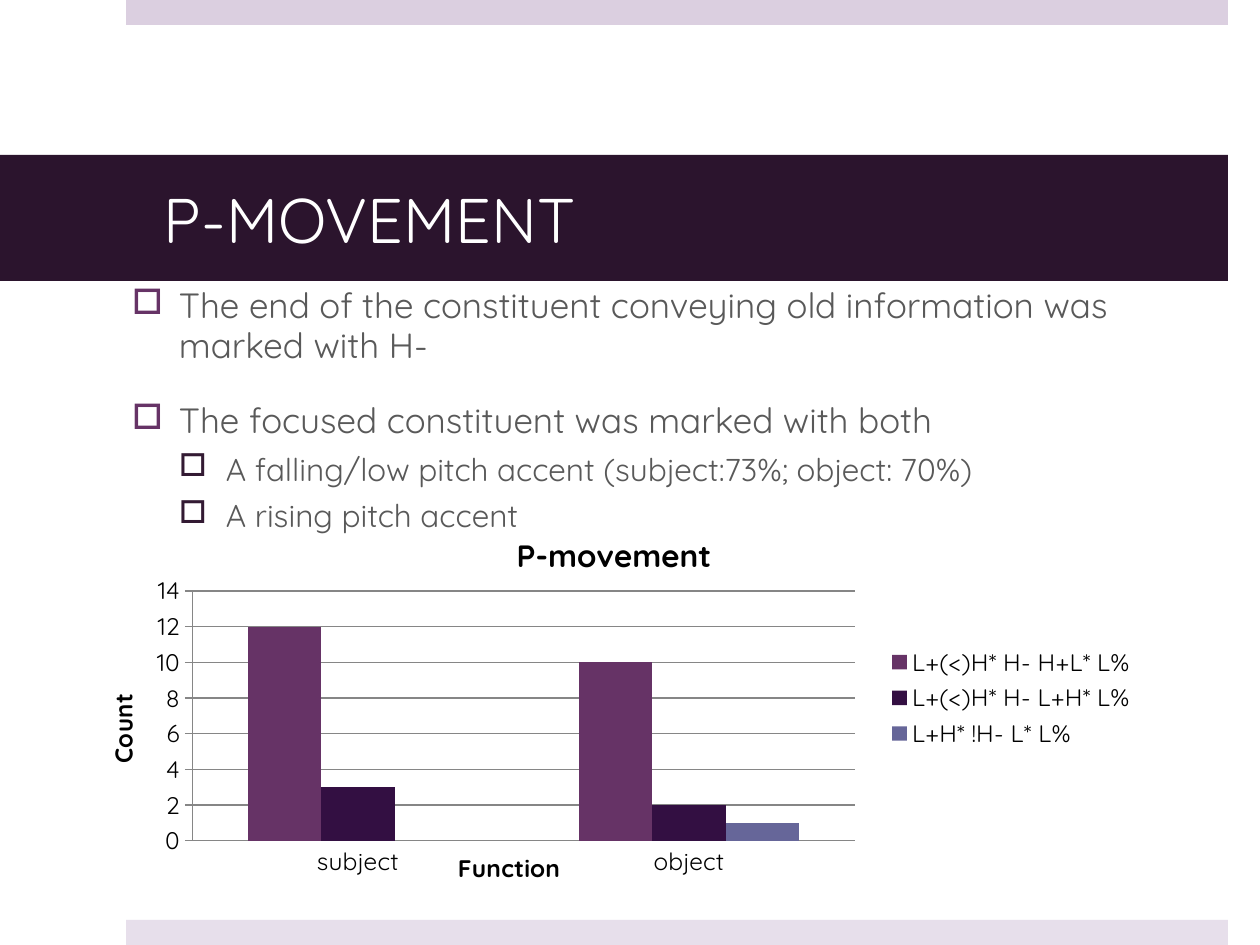
import pptx
import pptx.chart.data
import pptx.dml.color
import pptx.enum.chart
import pptx.enum.shapes
import pptx.enum.text
import pptx.oxml
import pptx.oxml.ns
import pptx.util
from lxml import etree

RGBColor = pptx.dml.color.RGBColor
WHITE = RGBColor(0xFF, 0xFF, 0xFF)
BLACK = RGBColor(0, 0, 0)
GRAY = RGBColor(0x86, 0x86, 0x86)
BODY_GRAY = RGBColor(0x59, 0x59, 0x59)
TITLE_PURPLE = RGBColor(0x2B, 0x14, 0x2D)
TOP_LILAC = RGBColor(0xDB, 0xCF, 0xE0)
BOTTOM_LILAC = RGBColor(0xE7, 0xDF, 0xEB)
PLUM = RGBColor(0x66, 0x33, 0x66)
DARK_PLUM = RGBColor(0x33, 0x1A, 0x33)
VIOLET = RGBColor(0x33, 0x0F, 0x42)
SLATE = RGBColor(0x66, 0x66, 0x99)

FONT = "Quicksand"
EMU_PER_PX = 914400 / 126

# Level: text size, space before, indent in px, bullet colour
LEVELS = [(20, 20, 47, PLUM), (18, 6, 94, DARK_PLUM)]
HANGING = 47
BULLETS = [
    (0, "The end of the constituent conveying old information was marked with H-"),
    (0, "The focused constituent was marked with both"),
    (1, "A falling/low pitch accent (subject:73%; object: 70%)"),
    (1, "A rising pitch accent"),
]

CATEGORIES = ["subject", "object"]
SERIES = [
    ("L+(<)H* H- H+L* L%", (12, 10), PLUM),
    ("L+(<)H* H- L+H* L%", (3, 2), VIOLET),
    ("L+H* !H- L* L%", (None, 1), SLATE),
]


def px(length):
    return pptx.util.Emu(round(length * EMU_PER_PX))


def set_values(target, values):
    for name, value in values.items():
        setattr(target, name, value)


def set_font(font, size, color, bold=False):
    set_values(font, {"name": FONT, "size": pptx.util.Pt(size), "bold": bold})
    font.color.rgb = color


def add_bar(slide, box, color):
    shape = slide.shapes.add_shape(
        pptx.enum.shapes.MSO_SHAPE.RECTANGLE, *map(px, box))
    shape.shadow.inherit = False
    shape.fill.solid()
    shape.fill.fore_color.rgb = color
    shape.line.fill.background()
    return shape


def add_title(slide, box, text):
    frame = add_bar(slide, box, TITLE_PURPLE).text_frame
    set_values(frame, {
        "word_wrap": True,
        "vertical_anchor": pptx.enum.text.MSO_ANCHOR.MIDDLE,
        "margin_left": px(164), "margin_right": px(38),
        "margin_top": px(6), "margin_bottom": px(6),
    })
    paragraph = frame.paragraphs[0]
    paragraph.alignment = pptx.enum.text.PP_ALIGN.LEFT
    run = paragraph.add_run()
    run.text = text
    set_font(run.font, 36, WHITE)


def add_bullet(paragraph, indent, color):
    properties = paragraph._p.get_or_add_pPr()
    properties.set("marL", str(px(indent)))
    properties.set("indent", str(-px(HANGING)))
    bullet_color = etree.SubElement(properties, pptx.oxml.ns.qn("a:buClr"))
    etree.SubElement(bullet_color, pptx.oxml.ns.qn("a:srgbClr"), val=str(color))
    etree.SubElement(properties, pptx.oxml.ns.qn("a:buChar"), char="□")


def add_body(slide, box, bullets):
    frame = slide.shapes.add_textbox(*map(px, box)).text_frame
    set_values(frame, {"word_wrap": True, "margin_left": px(12), "margin_right": px(12),
                       "margin_top": px(6), "margin_bottom": px(6)})
    for index, (level, text) in enumerate(bullets):
        size, space, indent, color = LEVELS[level]
        paragraph = frame.paragraphs[0] if index == 0 else frame.add_paragraph()
        set_values(paragraph, {"level": level, "line_spacing": 0.95,
                               "space_before": pptx.util.Pt(space)})
        add_bullet(paragraph, indent, color)
        run = paragraph.add_run()
        run.text = text
        set_font(run.font, size, BODY_GRAY)


def place(element, position, **values):
    """Give a chart part a manual layout in fractions of the chart."""
    for layout in element.findall(pptx.oxml.ns.qn("c:layout")):
        element.remove(layout)
    layout = etree.Element(pptx.oxml.ns.qn("c:layout"))
    manual = etree.SubElement(layout, pptx.oxml.ns.qn("c:manualLayout"))
    for name, value in {**values, "xMode": "edge", "yMode": "edge", **position}.items():
        etree.SubElement(manual, pptx.oxml.ns.qn("c:" + name), val=str(value))
    text = element.find(pptx.oxml.ns.qn("c:tx"))
    element.insert(0 if text is None else 1, layout)


def set_title(owner, text, size):
    frame = owner.text_frame
    run = frame.paragraphs[0].add_run()
    run.text = text
    set_font(run.font, size, BLACK, bold=True)


def format_axis(axis, title, position, tick_mark):
    set_title(axis.axis_title, title, 14)
    place(axis.axis_title._element, position)
    set_font(axis.tick_labels.font, 14, BLACK)
    axis.major_tick_mark = tick_mark
    axis.minor_tick_mark = pptx.enum.chart.XL_TICK_MARK.NONE
    axis.format.line.color.rgb = GRAY


def add_count_chart(slide, box):
    data = pptx.chart.data.CategoryChartData()
    data.categories = CATEGORIES
    for name, values, _ in SERIES:
        data.add_series(name, values)
    chart = slide.shapes.add_chart(
        pptx.enum.chart.XL_CHART_TYPE.COLUMN_CLUSTERED, *map(px, box), data).chart
    set_font(chart.font, 10, BLACK)
    set_title(chart.chart_title, "P-movement", 18)

    # Plot
    plot = chart.plots[0]
    set_values(plot, {"gap_width": 150, "overlap": 0, "vary_by_categories": False})
    for series, (_, _, color) in zip(plot.series, SERIES):
        series.format.fill.solid()
        series.format.fill.fore_color.rgb = color
        series.invert_if_negative = False
    plot_area = chart._chartSpace.chart.plotArea
    place(plot_area, {"x": 0.106, "y": 0.211, "w": 0.619, "h": 0.676},
          layoutTarget="inner")

    # Axes
    marks = pptx.enum.chart.XL_TICK_MARK
    format_axis(chart.category_axis, "Function", {"x": 0.35, "y": 0.9}, marks.NONE)
    format_axis(chart.value_axis, "Count", {"x": 0.02, "y": 0.48}, marks.OUTSIDE)
    set_values(chart.value_axis, {"minimum_scale": 0, "maximum_scale": 14,
                                  "major_unit": 2, "has_major_gridlines": True})
    chart.value_axis.major_gridlines.format.line.color.rgb = GRAY

    # Legend
    chart.has_legend = True
    set_values(chart.legend, {"include_in_layout": False,
                              "position": pptx.enum.chart.XL_LEGEND_POSITION.RIGHT})
    set_font(chart.legend.font, 14, BLACK)


def main():
    presentation = pptx.Presentation()
    set_values(presentation, {"slide_width": px(1260), "slide_height": px(945)})
    slide = presentation.slides.add_slide(presentation.slide_layouts[6])
    add_bar(slide, (126, 0, 1102, 25), TOP_LILAC)
    add_bar(slide, (126, 920, 1102, 25), BOTTOM_LILAC)
    add_title(slide, (0, 155, 1228, 126), "P-MOVEMENT")
    add_body(slide, (120, 281, 1084, 263), BULLETS)
    add_count_chart(slide, (79, 513, 1070, 378))
    presentation.save("out.pptx")


if __name__ == "__main__":
    main()
